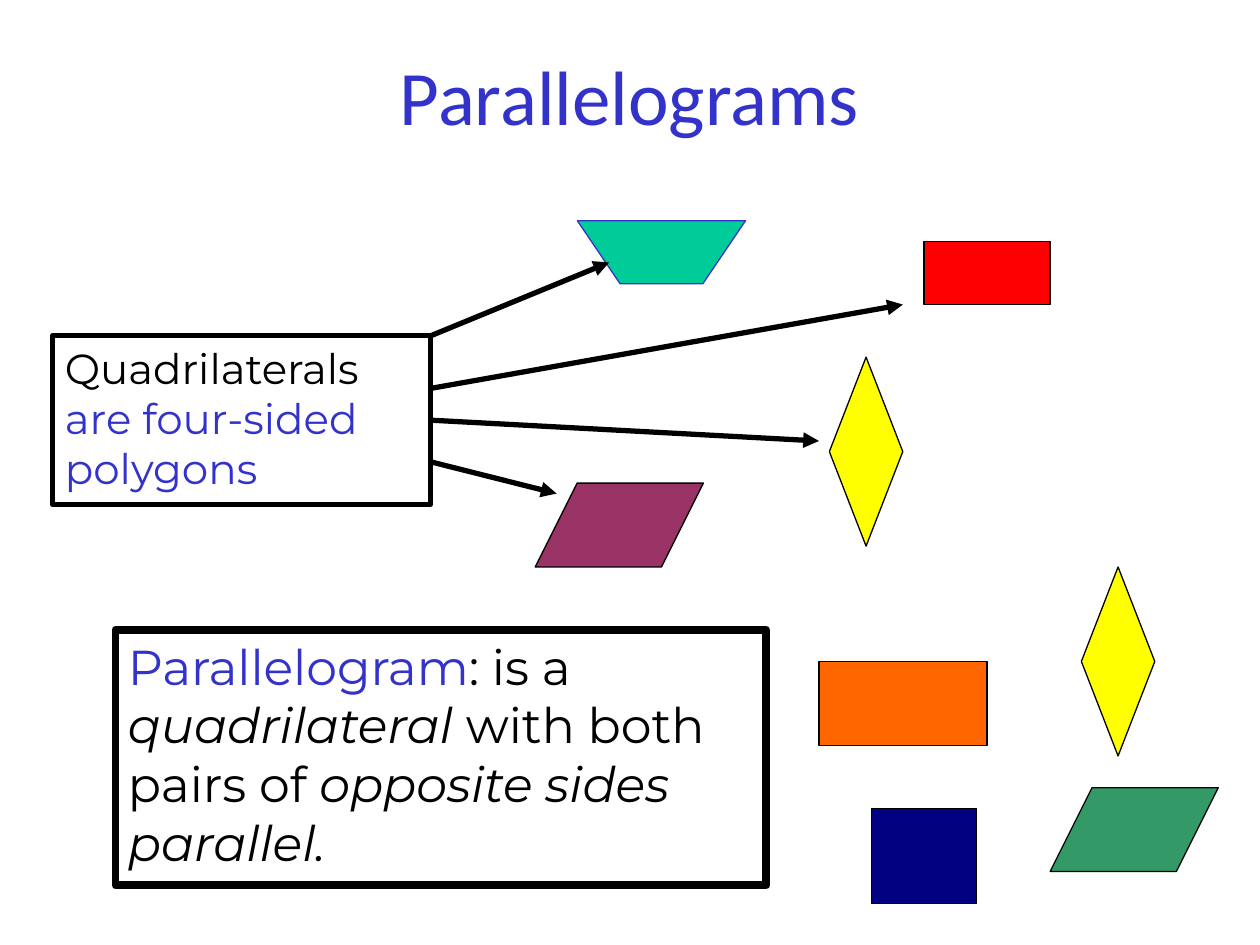
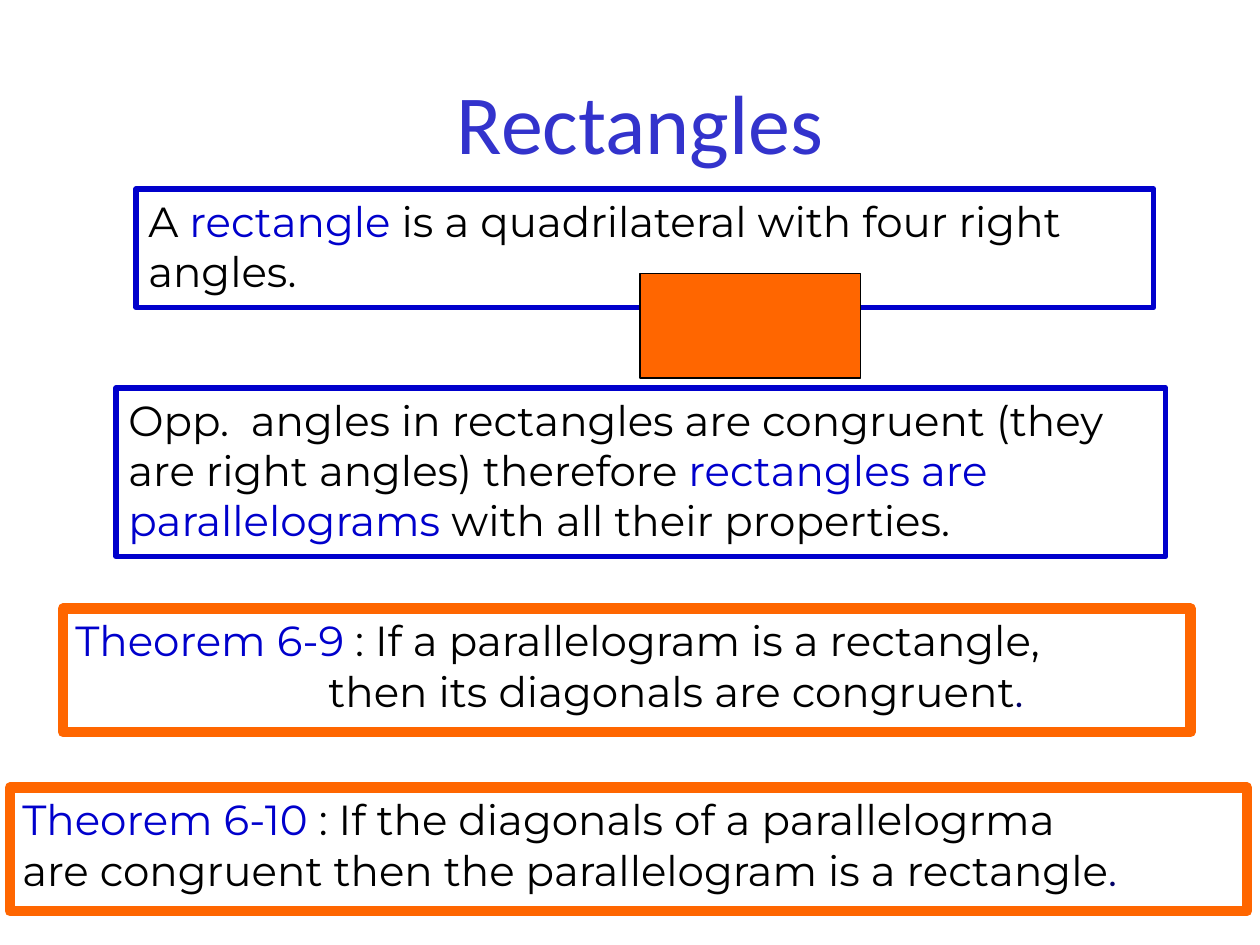
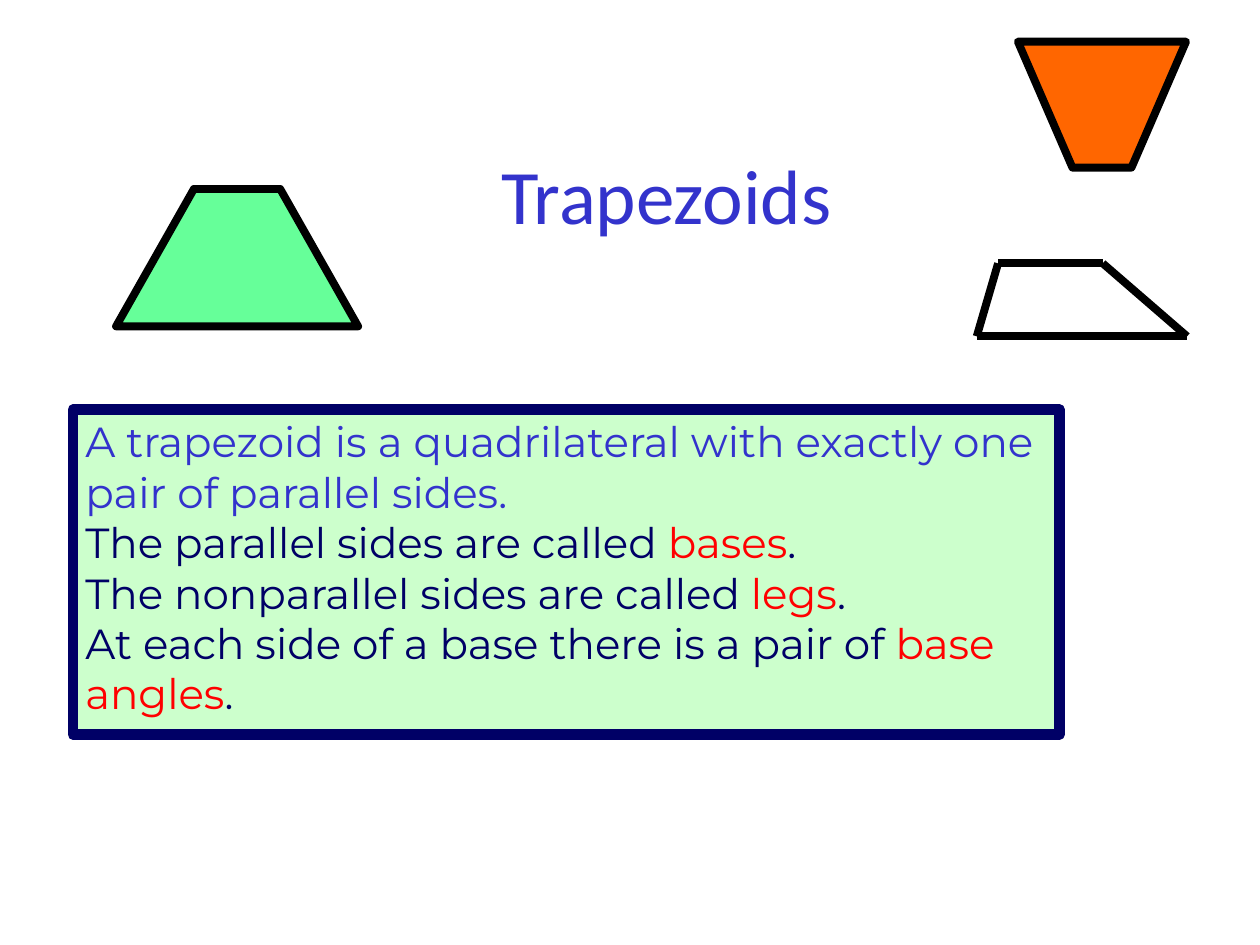
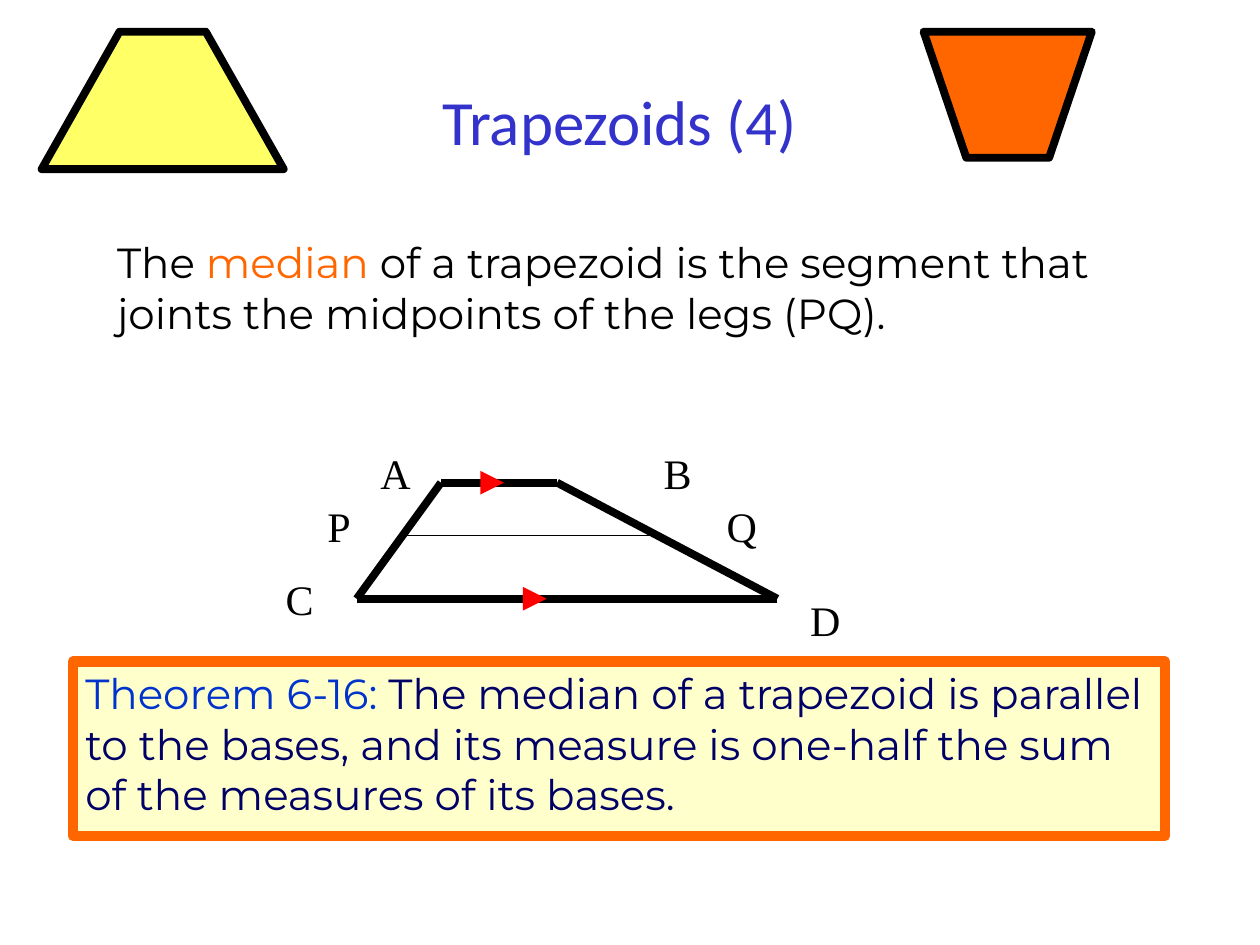
import lxml.etree
import pptx
import pptx.dml.color
import pptx.enum.shapes
import pptx.enum.text
import pptx.oxml.ns
import pptx.util

Cm = pptx.util.Cm
SHAPE = pptx.enum.shapes.MSO_SHAPE
ANCHOR = pptx.enum.text.MSO_ANCHOR
ALIGN = pptx.enum.text.PP_ALIGN
FIT = pptx.enum.text.MSO_AUTO_SIZE.SHAPE_TO_FIT_TEXT
qn = pptx.oxml.ns.qn

COLORS = {
    "black": "000000", "title": "3333CC", "blue": "0000CC", "theorem": "0033CC",
    "ink": "000066", "navy": "000080", "red": "FF0000", "orange": "FF6600",
    "yellow": "FFFF00", "lemon": "FFFF66", "cream": "FFFFCC", "teal": "00CC99",
    "plum": "993366", "green": "339966", "mint": "66FF99", "pale": "CCFFCC",
}
TITLE_FONT, BODY_FONT, LABEL_FONT = "Calibri", "Montserrat", "Times New Roman"
THIN, MEDIUM, BOLD, HEAVY = 0.75, 3, 4.5, 6


def rgb(name):
    return pptx.dml.color.RGBColor.from_string(COLORS[name])


def write(tf, paragraphs, size=24, font=BODY_FONT, align=ALIGN.LEFT,
          anchor=ANCHOR.TOP, wrap=True, grow=True, indents=()):
    """Fill tf with paragraphs, each a list of (text, colour[, italic]) runs."""
    tf.word_wrap = wrap
    tf.vertical_anchor = anchor
    if grow:
        tf.auto_size = FIT
    for i, runs in enumerate(paragraphs):
        p = tf.paragraphs[0] if i == 0 else tf.add_paragraph()
        p.alignment = align
        if i < len(indents):
            p._p.get_or_add_pPr().set("marL", str(Cm(indents[i])))
        for text, color, *italic in runs:
            r = p.add_run()
            r.text = text
            r.font.name = font
            r.font.size = pptx.util.Pt(size)
            r.font.italic = bool(italic)
            r.font.color.rgb = rgb(color)


def paint(sp, fill, line, width):
    sp.shadow.inherit = False
    if fill:
        sp.fill.solid()
        sp.fill.fore_color.rgb = rgb(fill)
    else:
        sp.fill.background()
    sp.line.color.rgb = rgb(line)
    sp.line.width = pptx.util.Pt(width)


def add_figure(s, kind, box, fill, line="black", width=THIN):
    sp = s.shapes.add_shape(kind, *map(Cm, box))
    paint(sp, fill, line, width)
    if kind == SHAPE.PARALLELOGRAM:
        sp.adjustments[0] = 0.5
    return sp


def add_note(s, box, paragraphs, line, width, fill=None, **text_format):
    sp = add_figure(s, SHAPE.RECTANGLE, box, fill, line, width)
    write(sp.text_frame, paragraphs, **text_format)
    return sp


def add_text(s, box, paragraphs, **text_format):
    write(s.shapes.add_textbox(*map(Cm, box)).text_frame, paragraphs, **text_format)


def add_title(s, box, text, size):
    add_text(s, box, [[(text, "title")]], size=size, font=TITLE_FONT,
             align=ALIGN.CENTER, anchor=ANCHOR.MIDDLE, grow=False)


def add_trapezoid(s, box, inset, fill, line="black", width=BOLD, wide_top=False):
    """Draw a symmetric trapezoid whose short base is inset at both ends."""
    x, y, w, h = box
    long_y, short_y = (y, y + h) if wide_top else (y + h, y)
    points = [(x, long_y), (x + inset, short_y), (x + w - inset, short_y), (x + w, long_y)]
    points = [(Cm(px), Cm(py)) for px, py in points]
    builder = s.shapes.build_freeform(*points[0])
    builder.add_line_segments(points[1:], close=True)
    paint(builder.convert_to_shape(), fill, line, width)


def add_line(s, start, end, width=BOLD, color="black", arrow=False):
    c = s.shapes.add_connector(pptx.enum.shapes.MSO_CONNECTOR.STRAIGHT,
                               *map(Cm, start + end))
    c.line.color.rgb = rgb(color)
    c.line.width = pptx.util.Pt(width)
    spPr = c._element.spPr
    if arrow:
        lxml.etree.SubElement(spPr.find(qn("a:ln")), qn("a:tailEnd"), type="triangle")
    lxml.etree.SubElement(spPr, qn("a:effectLst"))
    return c


def add_open_trapezoid(s, box, top_left, top_right):
    """Draw four separate sides; the top base runs from top_left to top_right."""
    x, y, w, h = box
    a, b = (x + top_left, y), (x + top_right, y)
    c, d = (x, y + h), (x + w, y + h)
    for start, end in ((a, c), (a, b), (c, d), (d, b)):
        add_line(s, start, end)


def quadrilateral_map(s, x, y):
    note_y, note_w = y + 2.32, 7.62
    note = add_note(s, (x, note_y, note_w, 3.4),
                    [[("Quadrilaterals", "black"), (" are four-sided polygons", "title")]],
                    "black", MEDIUM)
    add_trapezoid(s, (x + 10.58, y, 3.39, 1.27), 0.86, "teal", "title", THIN, wide_top=True)
    add_figure(s, SHAPE.RECTANGLE, (x + 17.57, y + 0.42, 2.54, 1.27), "red")
    add_figure(s, SHAPE.DIAMOND, (x + 15.66, y + 2.75, 1.48, 3.81), "yellow")
    add_figure(s, SHAPE.PARALLELOGRAM, (x + 9.73, y + 5.29, 3.39, 1.69), "plum")
    middle = 1.7
    for start, end_x, end_y in ((0, 11.22, 0.84), (1.06, 17.14, 1.69),
                                (middle, 15.45, 4.44), (2.54, 10.16, 5.5)):
        c = add_line(s, (x + note_w, note_y + start), (x + end_x, y + end_y),
                     MEDIUM, arrow=True)
        if start == middle:
            c.begin_connect(note, 3)


def parallelogram_examples(s, x, y):
    add_figure(s, SHAPE.PARALLELOGRAM, (x + 4.66, y + 4.45, 3.39, 1.69), "green")
    add_figure(s, SHAPE.RECTANGLE, (x, y + 1.91, 3.39, 1.69), "orange")
    add_figure(s, SHAPE.RECTANGLE, (x + 1.06, y + 4.87, 2.12, 1.91), "navy")
    add_figure(s, SHAPE.DIAMOND, (x + 5.29, y, 1.48, 3.81), "yellow")


def median_diagram(s, box):
    x, y, w, h = box
    add_open_trapezoid(s, box, 1.7, 4.04)
    add_line(s, (x + 0.86, y + 1.07), (x + 5.94, y + 1.07), THIN)
    for mark_x, mark_y in ((2.54, 0), (3.4, h)):
        add_line(s, (x + mark_x, y + mark_y), (x + mark_x + 0.43, y + mark_y),
                 color="red", arrow=True)
    for name, dx, dy in (("A", 0.23, -0.84), ("B", 5.94, -0.84), ("C", -1.68, 1.7),
                         ("D", 8.89, 2.13), ("P", -0.84, 0.23), ("Q", 7.21, 0.23)):
        add_text(s, (x + dx, y + dy, 1.1, 1.27), [[(name, "black")]],
                 font=LABEL_FONT, wrap=False)


def parallelograms_slide(s):
    add_title(s, (1.9, 0.64, 21.59, 2.54), "Parallelograms", 44)
    quadrilateral_map(s, 1.06, 4.45)
    add_note(s, (2.33, 12.7, 13.12, 5.15),
             [[("Parallelogram", "title"), (": is a ", "black"),
               ("quadrilateral ", "black", True), ("with both pairs of ", "black"),
               ("opposite sides parallel.", "black", True)]],
             "black", BOLD, size=28)
    parallelogram_examples(s, 16.51, 11.43)


def rectangles_slide(s):
    add_title(s, (2.11, 0.84, 21.59, 3.18), "Rectangles", 48)
    add_note(s, (2.74, 3.81, 20.52, 2.39),
             [[("A ", "black"), ("rectangle", "blue"),
               (" is a quadrilateral with four right angles.", "black")]],
             "blue", MEDIUM)
    add_figure(s, SHAPE.RECTANGLE, (12.9, 5.51, 4.45, 2.11), "orange")
    add_note(s, (2.34, 7.82, 21.16, 3.4),
             [[("Opp.  angles in rectangles are congruent (they are right angles) therefore ",
                "black"),
               ("rectangles are parallelograms", "blue"),
               (" with all their properties.", "black")]],
             "blue", MEDIUM)
    add_note(s, (1.27, 12.27, 22.73, 2.49),
             [[("Theorem 6-9", "blue"), (" : If a parallelogram is a rectangle,", "black")],
              [("then its diagonals are congruent", "black"), (".", "ink")]],
             "orange", HEAVY, indents=(0, 5.1))
    add_note(s, (0.2, 15.88, 24.94, 2.49),
             [[("Theorem 6-10", "blue"), (" : If the diagonals of a parallelogrma", "black")],
              [("are congruent then the parallelogram is a rectangle", "black"),
               (".", "ink")]],
             "orange", HEAVY)


def trapezoids_slide(s):
    add_title(s, (6.55, 2.74, 13.77, 2.34), "Trapezoids", 44)
    add_note(s, (1.47, 8.26, 19.89, 6.55),
             [[("A trapezoid is a quadrilateral with exactly one pair of parallel sides.",
                "title")],
              [("The parallel sides are called", "ink"), (" bases", "red"), (".", "ink")],
              [("The nonparallel sides are called ", "ink"), ("legs", "red"), (".", "ink")],
              [("At each side of a base there is a pair of ", "ink"),
               ("base angles", "red"), (".", "ink")]],
             "ink", HEAVY, "pale")
    add_trapezoid(s, (20.52, 0.84, 3.39, 2.54), 1.1, "orange", wide_top=True)
    add_trapezoid(s, (2.34, 3.81, 4.88, 2.77), 1.57, "mint")
    add_open_trapezoid(s, (19.69, 5.31, 4.24, 1.47), 0.43, 2.54)


def median_slide(s):
    add_title(s, (1.7, 0.84, 21.59, 3.18), "Trapezoids (4)", 36)
    add_trapezoid(s, (18.62, 0.64, 3.39, 2.54), 0.86, "orange", wide_top=True)
    add_trapezoid(s, (0.84, 0.64, 4.88, 2.77), 1.57, "lemon")
    add_text(s, (2.11, 4.65, 20.75, 2.29),
             [[("The ", "black"), ("median ", "orange"),
               ("of a trapezoid is the segment that joints the midpoints of the legs (PQ).",
                "black")]])
    median_diagram(s, (7.19, 9.73, 8.48, 2.34))
    add_note(s, (1.47, 13.34, 22.02, 3.51),
             [[("Theorem 6-16:", "theorem"),
               (" The median of a trapezoid is parallel to the bases, and its measure is "
                "one-half the sum of the measures of its bases.", "ink")]],
             "orange", HEAVY, "cream")


def main():
    prs = pptx.Presentation()
    prs.slide_width, prs.slide_height = Cm(25.4), Cm(19.05)
    blank = prs.slide_layouts[6]
    for build in (parallelograms_slide, rectangles_slide, trapezoids_slide, median_slide):
        build(prs.slides.add_slide(blank))
    prs.save("out.pptx")


if __name__ == "__main__":
    main()
